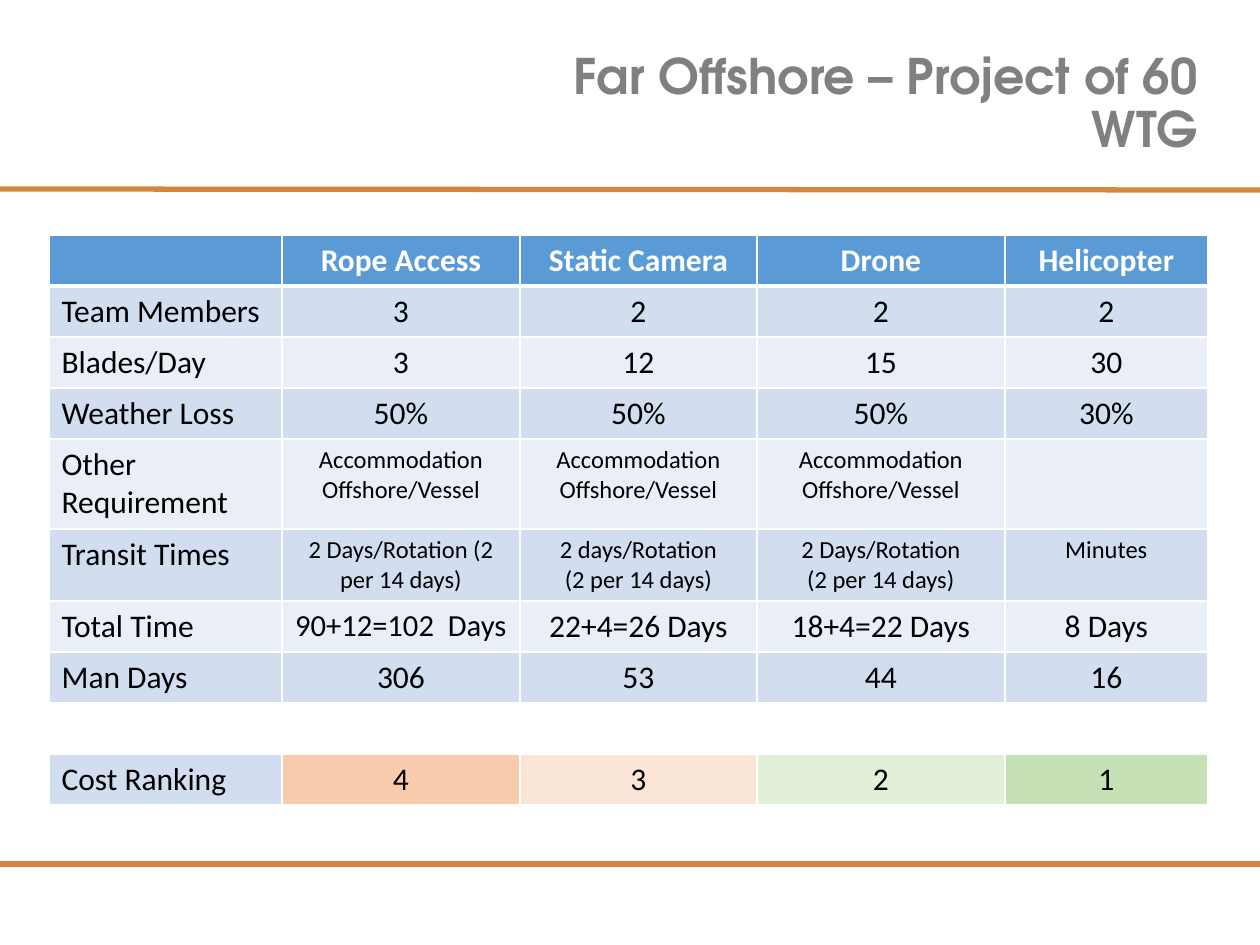
"""Build the far offshore inspection comparison slide."""
from lxml import etree
from pptx import Presentation
from pptx.dml.color import RGBColor
from pptx.enum.shapes import MSO_CONNECTOR
from pptx.enum.text import MSO_ANCHOR, PP_ALIGN
from pptx.oxml.ns import qn
from pptx.util import Pt

STRAIGHT = MSO_CONNECTOR.STRAIGHT
MIDDLE = MSO_ANCHOR.MIDDLE
LEFT, CENTER, RIGHT = PP_ALIGN.LEFT, PP_ALIGN.CENTER, PP_ALIGN.RIGHT

ORANGE = RGBColor(0xD7, 0x85, 0x38)
GRAY = RGBColor(0x80, 0x80, 0x80)
WHITE = RGBColor(0xFF, 0xFF, 0xFF)
BLACK = RGBColor(0x00, 0x00, 0x00)
HEADER_BLUE = RGBColor(0x5B, 0x9B, 0xD5)
BANDS = [RGBColor(0xEA, 0xEF, 0xF7), RGBColor(0xD2, 0xDE, 0xEF)]
RANKING_FILLS = [
    BANDS[1],
    RGBColor(0xF8, 0xCB, 0xAD),
    RGBColor(0xFB, 0xE5, 0xD6),
    RGBColor(0xE2, 0xF0, 0xD9),
    RGBColor(0xC5, 0xE0, 0xB4),
]

ROWS = [
    ["", "Rope Access", "Static Camera", "Drone", "Helicopter"],
    ["Team Members", "3", "2", "2", "2"],
    ["Blades/Day", "3", "12", "15", "30"],
    ["Weather Loss", "50%", "50%", "50%", "30%"],
    ["Other Requirement"] + ["Accommodation Offshore/Vessel"] * 3 + [""],
    ["Transit Times", "2 Days/Rotation (2 per 14 days)",
     "2 days/Rotation\n(2 per 14 days)", "2 Days/Rotation\n(2 per 14 days)", "Minutes"],
    ["Total Time", "90+12=102  Days", "22+4=26 Days", "18+4=22 Days", "8 Days"],
    ["Man Days", "306", "53", "44", "16"],
    [""] * 5,
    ["Cost Ranking", "4", "3", "2", "1"],
]
COLUMN_WIDTHS = [233, 238, 237, 248, 203]
ROW_HEIGHTS = [51, 51, 51, 51, 90, 72, 51, 51, 51, 51]
HEADER_ROW, GAP_ROW, RANKING_ROW = 0, 8, 9
SMALL_TEXT_ROWS = (4, 5)
TOTAL_TIME_ROPE = (6, 1)


def px(length):
    return round(length * 914400 / 126)


def add_border(cell, side, points):
    line = etree.SubElement(cell._tc.get_or_add_tcPr(), qn(f"a:ln{side}"), w=str(Pt(points)))
    fill = etree.SubElement(line, qn("a:solidFill"))
    etree.SubElement(fill, qn("a:srgbClr"), val=str(WHITE))


presentation = Presentation()
presentation.slide_width = px(1260)
presentation.slide_height = px(945)
slide = presentation.slides.add_slide(presentation.slide_layouts[6])

for start_y, end_y in [(864, 864), (189, 190)]:
    rule = slide.shapes.add_connector(STRAIGHT, 0, px(start_y), px(1260), px(end_y))
    rule.line.color.rgb = ORANGE
    rule.line.width = Pt(3)
    etree.SubElement(rule._element.spPr, qn("a:effectLst"))

title = slide.shapes.add_textbox(px(490), px(50), px(720), px(110))
title.text_frame.word_wrap = True
title.text_frame.vertical_anchor = MIDDLE
title.text_frame.text = "Far Offshore – Project of 60 WTG"
paragraph = title.text_frame.paragraphs[0]
paragraph.alignment = RIGHT
paragraph.line_spacing = 0.9
paragraph.font.name = "TeX Gyre Adventor"
paragraph.font.size = Pt(28)
paragraph.font.bold = True
paragraph.font.color.rgb = GRAY

table = slide.shapes.add_table(
    len(ROWS), len(COLUMN_WIDTHS), px(49), px(235),
    px(sum(COLUMN_WIDTHS)), px(sum(ROW_HEIGHTS))).table
table.horz_banding = False
for column, width in zip(table.columns, COLUMN_WIDTHS):
    column.width = px(width)

for row_index, (texts, height) in enumerate(zip(ROWS, ROW_HEIGHTS)):
    table.rows[row_index].height = px(height)
    is_header = row_index == HEADER_ROW
    for column_index, text in enumerate(texts):
        cell = table.cell(row_index, column_index)
        for side in "LRTB":
            heavy = (row_index, side) in [(HEADER_ROW, "B"), (HEADER_ROW + 1, "T")]
            add_border(cell, side, 3 if heavy else 1)
        if row_index == GAP_ROW:
            cell.fill.background()
        else:
            cell.fill.solid()
            if is_header:
                cell.fill.fore_color.rgb = HEADER_BLUE
            elif row_index == RANKING_ROW:
                cell.fill.fore_color.rgb = RANKING_FILLS[column_index]
            else:
                cell.fill.fore_color.rgb = BANDS[row_index % 2]

        size = 14 if row_index in SMALL_TEXT_ROWS and column_index else 18
        if (row_index, column_index) == TOTAL_TIME_ROPE:
            size = 17.5
        cell.text_frame.text = text
        for paragraph in cell.text_frame.paragraphs:
            paragraph.alignment = CENTER if column_index else LEFT
            for run in paragraph.runs:
                run.font.name = "Calibri"
                run.font.size = Pt(size)
                run.font.bold = is_header
                run.font.color.rgb = WHITE if is_header else BLACK

presentation.save("out.pptx")
